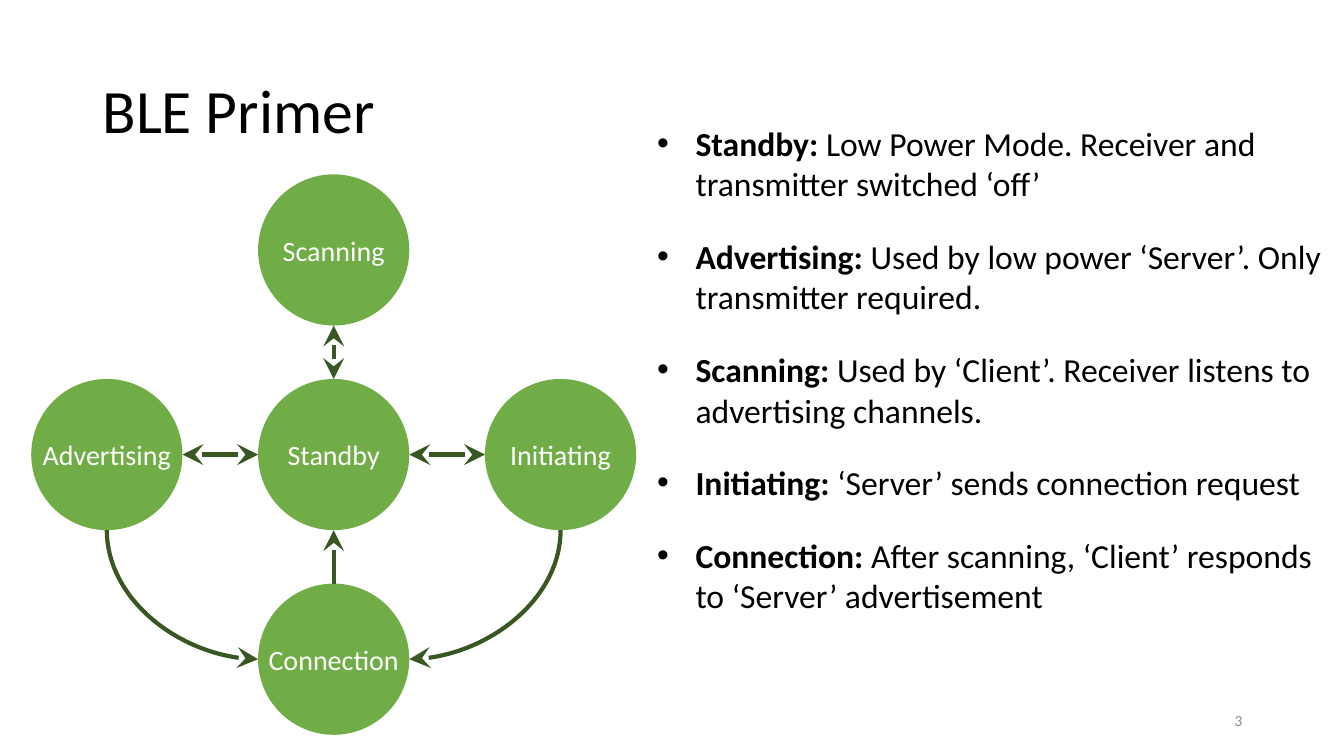
import pptx
import pptx.dml.color
import pptx.enum.shapes
import pptx.enum.text
import pptx.oxml.ns
import pptx.util
from lxml import etree

Inches, Pt = pptx.util.Inches, pptx.util.Pt
ALIGN = pptx.enum.text.PP_ALIGN
ANCHOR = pptx.enum.text.MSO_ANCHOR
CONNECTOR = pptx.enum.shapes.MSO_CONNECTOR
qn = pptx.oxml.ns.qn

DX, DY, RADIUS = 2.25, 2.03, 0.75
CX, CY = 3.31, 4.51
STATES = {
    "Scanning": (CX, CY - DY),
    "Connection": (CX, CY + DY),
    "Advertising": (CX - DX, CY),
    "Initiating": (CX + DX, CY),
    "Standby": (CX, CY),
}
DEFINITIONS = [
    ("Standby:", " Low Power Mode. Receiver and transmitter switched ‘off’"),
    ("Advertising:", " Used by low power ‘Server’. Only transmitter required."),
    ("Scanning:", " Used by ‘Client’. Receiver listens to advertising channels."),
    ("Initiating:", " ‘Server’ sends connection request"),
    ("Connection:", " After scanning, ‘Client’ responds to ‘Server’ advertisement"),
]


def rgb(color):
    return pptx.dml.color.RGBColor.from_string(color)


def apply(target, values):
    for name, value in values.items():
        setattr(target, name, value)


class Deck:
    font = "Calibri"
    black, white, grey = "000000", "FFFFFF", "8C8C8C"
    green, dark_green = "70AD47", "385723"

    def __init__(self, s):
        self.s = s

    def run(self, p, text, size, color, bold=False):
        r = p.add_run()
        r.text = text
        apply(r.font, {"name": self.font, "size": Pt(size), "bold": bold})
        r.font.color.rgb = rgb(color)

    def text_box(self, box, **frame):
        tf = self.s.shapes.add_textbox(*map(Inches, box)).text_frame
        apply(tf, {"word_wrap": True, **frame})
        return tf

    def label(self, text, box, size, color, **paragraph):
        tf = self.text_box(box, vertical_anchor=ANCHOR.MIDDLE)
        p = tf.paragraphs[0]
        apply(p, paragraph)
        self.run(p, text, size, color)

    def definitions(self, items, box):
        """Bulleted list with each term in bold."""
        tf = self.text_box(box)
        for i, (term, meaning) in enumerate(items):
            p = tf.add_paragraph() if i else tf.paragraphs[0]
            p.space_after = Pt(23.2)
            pPr = p._p.get_or_add_pPr()
            pPr.set("marL", str(Inches(0.38)))
            pPr.set("indent", str(-Inches(0.38)))
            etree.SubElement(pPr, qn("a:buFont"), typeface="Arial")
            etree.SubElement(pPr, qn("a:buChar"), char="•")
            self.run(p, term, 24, self.black, bold=True)
            self.run(p, meaning, 24, self.black)

    def state(self, name, x, y):
        sp = self.s.shapes.add_shape(
            pptx.enum.shapes.MSO_SHAPE.OVAL,
            *map(Inches, (x - RADIUS, y - RADIUS, 2 * RADIUS, 2 * RADIUS)))
        sp.shadow.inherit = False
        sp.fill.solid()
        sp.fill.fore_color.rgb = rgb(self.green)
        sp.line.fill.background()
        tf = sp.text_frame
        apply(tf, {"margin_left": 0, "margin_right": 0, "margin_top": 0,
                   "margin_bottom": 0, "word_wrap": False,
                   "vertical_anchor": ANCHOR.MIDDLE})
        p = tf.paragraphs[0]
        p.alignment = ALIGN.CENTER
        self.run(p, name, 20, self.white)

    def arrow(self, start, end, ends, kind=CONNECTOR.STRAIGHT):
        """Connector with arrowheads at the named ends, headEnd being the start."""
        c = self.s.shapes.add_connector(kind, *map(Inches, (*start, *end)))
        c.line.color.rgb = rgb(self.dark_green)
        c.line.width = Pt(3)
        ln = c.line._get_or_add_ln()
        for tag in ends:
            etree.SubElement(ln, qn("a:" + tag), type="stealth", w="lg", len="lg")
        etree.SubElement(c._element.spPr, qn("a:effectLst"))
        return c

    def bend(self, start, end):
        """Quarter curve that leaves start downwards and enters end sideways."""
        (x1, y1), (x2, y2) = start, end
        mx, my = (x1 + x2) / 2, (y1 + y2) / 2
        half_w, half_h = (y2 - y1) / 2, abs(x2 - x1) / 2
        leftward = x2 < x1
        if not leftward:
            half_w = -half_w
        c = self.arrow((mx - half_w, my - half_h), (mx + half_w, my + half_h),
                       ["tailEnd"], CONNECTOR.CURVE)
        spPr = c._element.spPr
        spPr.find(qn("a:xfrm")).set("rot", str((90 if leftward else 270) * 60000))
        spPr.find(qn("a:prstGeom")).set("prst", "curvedConnector2")


def side(name, dx, dy):
    """Point on a state's circle in the given unit direction."""
    x, y = STATES[name]
    return x + dx * RADIUS, y + dy * RADIUS


def main():
    prs = pptx.Presentation()
    apply(prs, {"slide_width": Inches(13.33), "slide_height": Inches(7.5)})
    deck = Deck(prs.slides.add_slide(prs.slide_layouts[6]))

    deck.label("BLE Primer", (0.92, 0.4, 11.5, 1.45), 44, deck.black, line_spacing=0.9)
    deck.label("3", (9.42, 6.95, 3, 0.4), 11, deck.grey, alignment=ALIGN.RIGHT)
    deck.definitions(DEFINITIONS, (6.42, 1.17, 6.89, 5.03))

    for name, (x, y) in STATES.items():
        deck.state(name, x, y)

    both = ["headEnd", "tailEnd"]
    for name, dx, dy, ends in [("Scanning", 0, -1, both), ("Initiating", 1, 0, both),
                               ("Connection", 0, 1, ["headEnd"]),
                               ("Advertising", -1, 0, both)]:
        deck.arrow(side("Standby", dx, dy), side(name, -dx, -dy), ends)
    for name, dx in [("Initiating", 1), ("Advertising", -1)]:
        deck.bend(side(name, 0, 1), side("Connection", dx, 0))

    prs.save("out.pptx")


if __name__ == "__main__":
    main()
